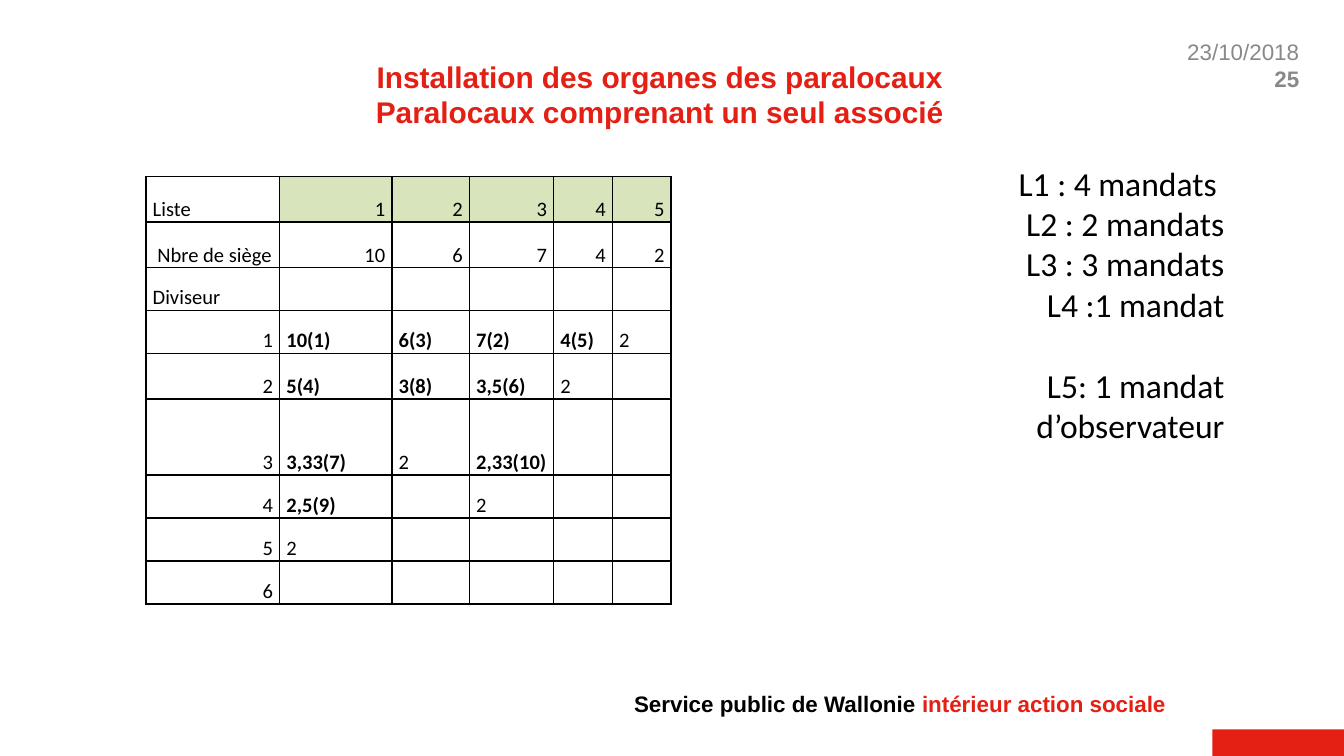
from lxml import etree
from pptx import Presentation
from pptx import util as u
from pptx.dml.color import RGBColor
from pptx.enum import shapes, text
from pptx.oxml import ns

RED = RGBColor(0xE4, 0x1F, 0x13)
GREY = RGBColor(0x89, 0x89, 0x89)
GREEN = RGBColor(0xD7, 0xE4, 0xBC)
BLACK = RGBColor(0, 0, 0)
LEFT, CENTER, RIGHT = (text.PP_ALIGN.LEFT, text.PP_ALIGN.CENTER,
                       text.PP_ALIGN.RIGHT)

prs = Presentation()
prs.slide_width, prs.slide_height = u.Pt(720), u.Pt(405)


def share(x, y, w, h):
    """Box in EMU from percentages of the slide's width and height."""
    W, H = prs.slide_width, prs.slide_height
    return [int(n * side / 100) for n, side in ((x, W), (y, H), (w, W), (h, H))]


def add_run(p, words, size, color=BLACK, bold=False, font="Arial"):
    r = p.add_run()
    r.text = words
    r.font.name, r.font.size, r.font.bold = font, u.Pt(size), bold
    r.font.color.rgb = color


def add_frame(s, box, anchor=text.MSO_ANCHOR.TOP):
    tf = s.shapes.add_textbox(*box).text_frame
    tf.word_wrap = True
    tf.vertical_anchor = anchor
    return tf


def add_line(tf, align):
    """Next paragraph of the frame, using its first one while still empty."""
    p = tf.paragraphs[0]
    if p.runs:
        p = tf.add_paragraph()
    p.alignment = align
    return p


def date_and_number(s, box):
    tf = add_frame(s, box)
    for words, bold in (("23/10/2018", False), ("25", True)):
        add_run(add_line(tf, RIGHT), words, 12, GREY, bold)


def footer(s, text_box, bar_box):
    sp = s.shapes.add_shape(shapes.MSO_SHAPE.RECTANGLE, *bar_box)
    sp.shadow.inherit = False
    sp.fill.solid()
    sp.fill.fore_color.rgb = RED
    sp.line.fill.background()
    p = add_line(add_frame(s, text_box, text.MSO_ANCHOR.MIDDLE), RIGHT)
    add_run(p, "Service public de Wallonie ", 12, BLACK, True)
    add_run(p, "intérieur action sociale ", 12, RED, True)


def title(s, box):
    p = add_line(add_frame(s, box, text.MSO_ANCHOR.MIDDLE), CENTER)
    add_run(p, "Installation des organes des paralocaux", 16, RED, True)
    p.add_line_break()
    add_run(p, "Paralocaux comprenant un seul associé", 16, RED, True)


def add_borders(cell):
    tcPr = cell._tc.get_or_add_tcPr()
    for side in ("lnL", "lnR", "lnT", "lnB"):
        ln = etree.SubElement(tcPr, ns.qn("a:" + side), w=str(u.Pt(1)))
        fill = etree.SubElement(ln, ns.qn("a:solidFill"))
        etree.SubElement(fill, ns.qn("a:srgbClr"), val=str(BLACK))


def fill_cell(cell, words, row, col):
    add_borders(cell)
    if row == 0 and col > 0:
        cell.fill.solid()
        cell.fill.fore_color.rgb = GREEN
    else:
        cell.fill.background()
    cell.margin_left = cell.margin_right = u.Inches(0.05)
    cell.margin_top = cell.margin_bottom = 0
    cell.vertical_anchor = text.MSO_ANCHOR.BOTTOM
    if words:
        header = row < 2 or col == 0
        p = cell.text_frame.paragraphs[0]
        p.alignment = RIGHT if header and words.isdigit() else LEFT
        add_run(p, words, 11, bold="(" in words, font="Calibri")


def seat_table(s, box):
    """Quotients by list, with the rank of each seat won in brackets."""
    rows = [
        ["Liste", "1", "2", "3", "4", "5"],
        [" Nbre de siège", "10", "6", "7", "4", "2"],
        ["Diviseur"],
        ["1", "10(1)", "6(3)", "7(2)", "4(5)", "2"],
        ["2", "5(4)", "3(8)", "3,5(6)", "2"],
        ["3", "3,33(7)", "2", "2,33(10)"],
        ["4", "2,5(9)", "", "2"],
        ["5", "2"],
        ["6"],
    ]
    widths = [1, 0.84, 0.58, 0.63, 0.44, 0.44]
    heights = [0.34, 0.34, 0.32, 0.32, 0.34, 0.57, 0.32, 0.32, 0.32]
    table = s.shapes.add_table(len(rows), len(widths), *box).table
    table.first_row = table.horz_banding = False
    for column, w in zip(table.columns, widths):
        column.width = int(box[2] * w / sum(widths))
    for row, h in zip(table.rows, heights):
        row.height = int(box[3] * h / sum(heights))
    for i, row in enumerate(rows):
        for j in range(len(widths)):
            fill_cell(table.cell(i, j), row[j] if j < len(row) else "", i, j)


def mandates(s, box):
    tf = add_frame(s, box)
    for words in ("L1 : 4 mandats ", "L2 : 2 mandats", "L3 : 3 mandats",
                  "L4 :1 mandat", "L5: 1 mandat", "d’observateur"):
        p = add_line(tf, RIGHT)
        if words.startswith("L5"):
            p.space_before = u.Pt(22)
        add_run(p, words, 18, font="Calibri")


def main():
    s = prs.slides.add_slide(prs.slide_layouts[6])
    date_and_number(s, share(78, 4.2, 19.66, 10.5))
    footer(s, share(0, 90.4, 88.2, 5.3), share(90.2, 96.5, 9.8, 3.5))
    title(s, share(6.1, 4.1, 86, 16.7))
    seat_table(s, share(10.86, 23.35, 39.1, 56.55))
    mandates(s, share(42.1, 20.65, 50, 44.8))
    prs.save("out.pptx")


if __name__ == "__main__":
    main()
